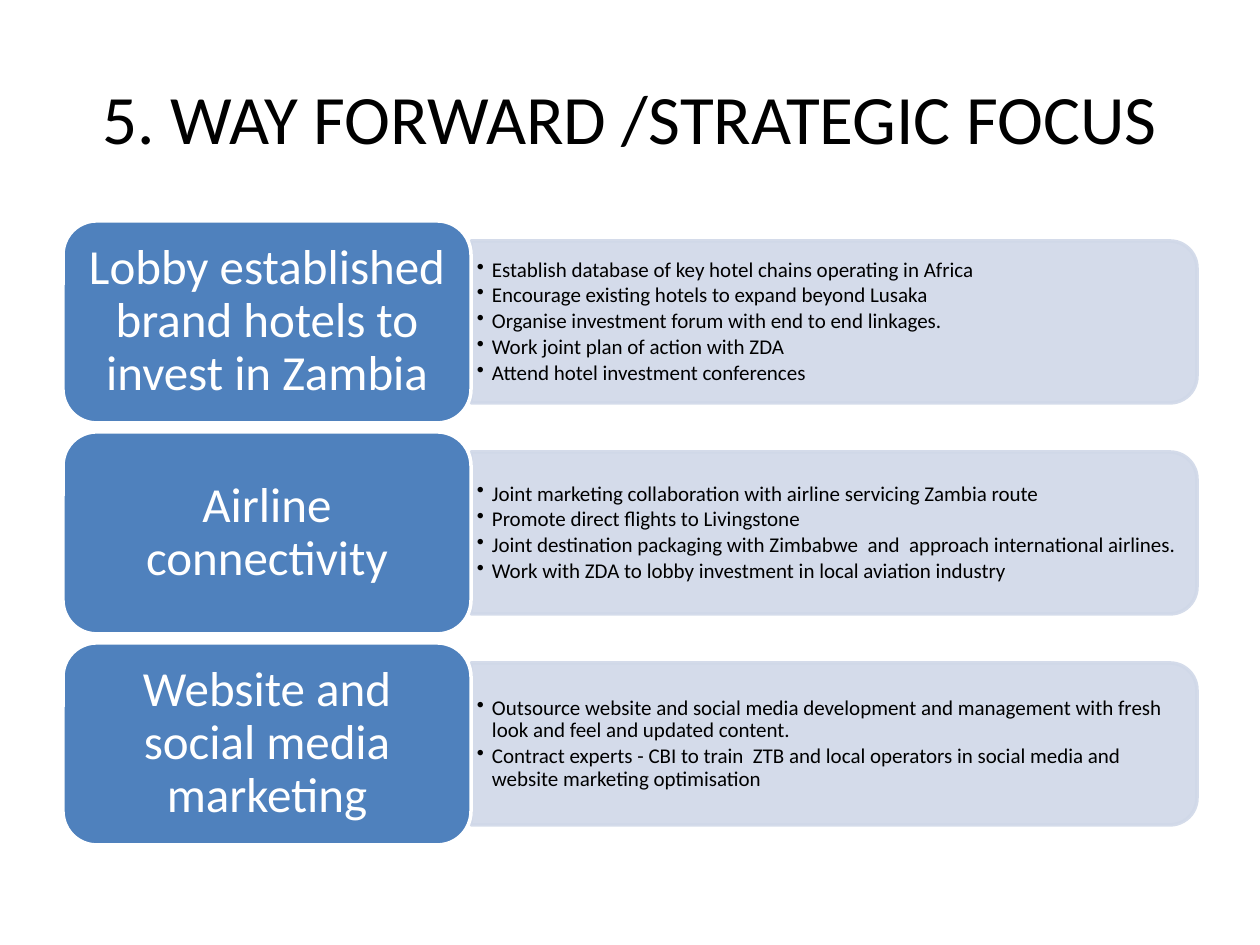
import pptx
import pptx.util
import pptx.dml.color
import pptx.enum.shapes
import pptx.enum.text
import pptx.oxml.ns
from lxml import etree

PX = 914400 // 126
RGBColor = pptx.dml.color.RGBColor
BLUE = RGBColor(0x4F, 0x81, 0xBD)
PALE = RGBColor(0xD0, 0xD8, 0xE8)
WHITE = RGBColor(0xFF, 0xFF, 0xFF)
BLACK = RGBColor(0, 0, 0)
FONT = "Calibri"
SHAPES = pptx.enum.shapes.MSO_SHAPE
ALIGN = pptx.enum.text.PP_ALIGN
MIDDLE = pptx.enum.text.MSO_ANCHOR.MIDDLE

TITLE = "5. WAY FORWARD /STRATEGIC FOCUS"
FOCUS_AREAS = [
    ("Lobby established brand hotels to invest in Zambia", [
        "Establish database of key hotel chains operating in Africa",
        "Encourage existing hotels to expand beyond Lusaka",
        "Organise investment forum with end to end linkages.",
        "Work joint plan of action with ZDA",
        "Attend hotel investment conferences",
    ]),
    ("Airline connectivity", [
        "Joint marketing collaboration with airline servicing Zambia route",
        "Promote direct flights to Livingstone",
        "Joint destination packaging with Zimbabwe  and  approach international airlines.",
        "Work with ZDA to lobby investment in local aviation industry",
    ]),
    ("Website and social media marketing", [
        "Outsource website and social media development and management with fresh look and feel and updated content.",
        "Contract experts - CBI to train  ZTB and local operators in social media and website marketing optimisation",
    ]),
]
LABEL_WIDTH = 408
ROW_HEIGHT, ROW_PITCH = 202, 211


def px(*lengths):
    return [length * PX for length in lengths]


def format_paragraph(para, size, color, align):
    para.alignment = align
    para.line_spacing = 0.9
    for span in para.runs:
        span.font.name = FONT
        span.font.size = pptx.util.Pt(size)
        span.font.color.rgb = color


def set_frame(frame, side, top):
    """Wrap the text, centre it vertically and set its insets."""
    frame.word_wrap = True
    frame.vertical_anchor = MIDDLE
    frame.margin_left = frame.margin_right = side * PX
    frame.margin_top = frame.margin_bottom = top * PX


def style_shape(shape, fill, line):
    shape.shadow.inherit = False
    shape.fill.solid()
    shape.fill.fore_color.rgb = fill
    shape.line.color.rgb = line
    shape.line.width = pptx.util.Pt(2)


def add_bullet(para, indent):
    properties = para._p.get_or_add_pPr()
    properties.set("marL", str(indent * PX))
    properties.set("indent", str(-indent * PX))
    bullet = etree.SubElement(properties, pptx.oxml.ns.qn("a:buChar"))
    bullet.set("char", "•")


def add_panel(page, left, top, width, height):
    """Draw a panel rounded on its right: a top-rounded shape turned by 90 degrees."""
    turned_left = left + (width - height) // 2
    turned_top = top + (height - width) // 2
    panel = page.shapes.add_shape(SHAPES.ROUND_2_SAME_RECTANGLE,
                                  *px(turned_left, turned_top, height, width))
    panel.rotation = 90
    style_shape(panel, PALE, PALE)
    for color in panel._element.spPr.iter(pptx.oxml.ns.qn("a:srgbClr")):
        etree.SubElement(color, pptx.oxml.ns.qn("a:alpha")).set("val", "90000")


def add_bullets(page, left, top, width, height, points):
    box = page.shapes.add_textbox(*px(left, top, width, height))
    frame = box.text_frame
    set_frame(frame, 6, 4)
    frame.text = "\n".join(points)
    for para in frame.paragraphs:
        format_paragraph(para, 12, BLACK, ALIGN.LEFT)
        para.space_after = pptx.util.Pt(1.8)
        add_bullet(para, 15)


def add_label(page, left, top, width, height, text):
    label = page.shapes.add_shape(SHAPES.ROUNDED_RECTANGLE, *px(left, top, width, height))
    style_shape(label, BLUE, WHITE)
    set_frame(label.text_frame, 15, 8)
    label.text_frame.text = text
    format_paragraph(label.text_frame.paragraphs[0], 28, WHITE, ALIGN.CENTER)


def add_focus_row(page, left, top, width, height, heading, points):
    panel_left, panel_width = left + LABEL_WIDTH, width - LABEL_WIDTH
    margin = height // 10
    panel_height = height - 2 * margin
    add_panel(page, panel_left, top + margin, panel_width, panel_height)
    add_bullets(page, panel_left, top + margin + 8, panel_width - 8, panel_height - 16, points)
    add_label(page, left, top, LABEL_WIDTH, height, heading)


def add_title(page, left, top, width, height):
    title = page.shapes.title
    title.left, title.top, title.width, title.height = px(left, top, width, height)
    title.text_frame.text = TITLE
    title.text_frame.vertical_anchor = MIDDLE
    para = title.text_frame.paragraphs[0]
    format_paragraph(para, 39.6, BLACK, ALIGN.CENTER)
    para.line_spacing = 1.0


def main():
    deck = pptx.Presentation()
    deck.slide_width, deck.slide_height = px(1260, 945)
    page = deck.slides.add_slide(deck.slide_layouts.get_by_name("Title Only"))
    add_title(page, 63, 38, 1134, 157)
    for row, (heading, points) in enumerate(FOCUS_AREAS):
        add_focus_row(page, 63, 221 + row * ROW_PITCH, 1134, ROW_HEIGHT, heading, points)
    deck.save("out.pptx")


if __name__ == "__main__":
    main()
